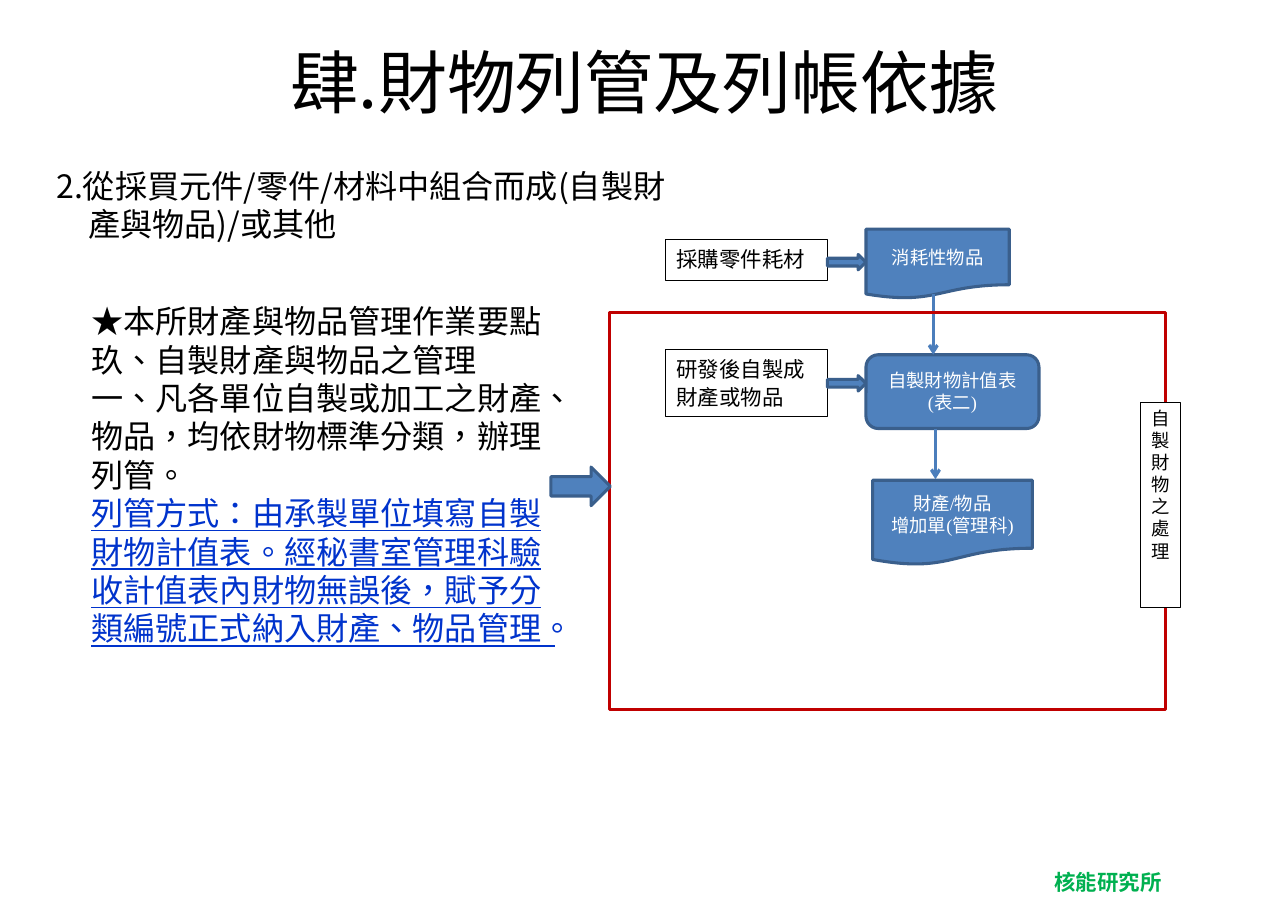
from dataclasses import dataclass
from pptx import Presentation, util as u
from pptx.dml.color import RGBColor
from pptx.enum import shapes, text
from pptx.oxml.ns import qn
from lxml import etree

SHAPE, ALIGN, ANCHOR = shapes.MSO_SHAPE, text.PP_ALIGN, text.MSO_ANCHOR


@dataclass(frozen=True)
class Theme:
    sans: str = "Noto Sans CJK SC"
    serif: str = "Times New Roman"
    ink: str = "000000"
    paper: str = "FFFFFF"
    blue: str = "4F81BD"
    edge: str = "3A5F8C"
    link: str = "4B7EBC"
    red: str = "C00000"
    green: str = "00B050"
    mark: str = "0033CC"
    title: int = 45
    body: int = 21
    note: int = 14
    small: int = 12


T = Theme()
BODY = dict(size=T.body, pitch=25.1)
FLOW = dict(size=T.small, pitch=14.4, face=T.serif, color=T.paper, align=ALIGN.CENTER)
NOTE = dict(size=T.note, pitch=18, face=T.serif)
STRIP = dict(size=T.small, pitch=14.4, face=T.serif)


def assign(item, **values):
    for name, value in values.items():
        setattr(item, name, value)


def rgb(code):
    return RGBColor.from_string(code)


class Board:
    """Draws on one slide; lengths are percentages of its width and height."""

    def __init__(self, deck):
        self.wide, self.high = deck.slide_width, deck.slide_height
        self.slide = deck.slides.add_slide(deck.slide_layouts[3])
        self.items = self.slide.shapes

    def span(self, x, y, w, h):
        return [round(v * side / 100) for v, side in
                ((x, self.wide), (y, self.high), (w, self.wide), (h, self.high))]

    def letter(self, frame, lines, size, pitch=None, face=T.sans, color=T.ink,
               align=ALIGN.LEFT, hang=0, bold=False):
        """Fill a frame; a line is a string or a (string, font changes) pair."""
        for i, line in enumerate(lines):
            words, extra = (line, {}) if isinstance(line, str) else line
            para = frame.paragraphs[0] if i == 0 else frame.add_paragraph()
            props = para._p.get_or_add_pPr()
            props.set("marL", str(u.Inches(hang)))
            props.set("indent", str(-u.Inches(hang)))
            etree.SubElement(props, qn("a:buNone"))
            assign(para, alignment=align, space_before=u.Pt(0), space_after=u.Pt(0))
            if pitch:
                para.line_spacing = u.Pt(pitch)
            run = para.add_run()
            run.text = words
            look = dict(name=face, size=u.Pt(size), bold=bold, underline=False)
            tint = extra.get("color", color)
            look.update((k, v) for k, v in extra.items() if k != "color")
            assign(run.font, **look)
            run.font.color.rgb = rgb(tint)
            mark = run._r.get_or_add_rPr()
            mark.set("lang", "zh-TW")
            mark.find(qn("a:latin")).addnext(
                etree.Element(qn("a:ea"), typeface=T.sans))

    def place(self, index, at, lines, anchor=ANCHOR.TOP, **style):
        """Move and fill one of the layout's placeholders."""
        item = self.slide.placeholders[index]
        assign(item, **dict(zip(("left", "top", "width", "height"), self.span(*at))))
        assign(item.text_frame, auto_size=text.MSO_AUTO_SIZE.NONE,
               word_wrap=True, vertical_anchor=anchor)
        self.letter(item.text_frame, lines, **style)

    def label(self, at, words, **style):
        frame = self.items.add_textbox(*self.span(*at)).text_frame
        frame.word_wrap = False
        self.letter(frame, [words], **style)

    def block(self, kind, at, fill=T.blue, line=T.edge, weight=2, lines=(),
              anchor=ANCHOR.MIDDLE, wrap=False, **style):
        item = self.items.add_shape(kind, *self.span(*at))
        item.shadow.inherit = False
        if fill:
            item.fill.solid()
            item.fill.fore_color.rgb = rgb(fill)
        else:
            item.fill.background()
        item.line.color.rgb = rgb(line)
        item.line.width = u.Pt(weight)
        if lines:
            assign(item.text_frame, vertical_anchor=anchor, word_wrap=wrap)
            self.letter(item.text_frame, lines, **style)

    def note(self, at, lines, **style):
        self.block(SHAPE.RECTANGLE, at, T.paper, T.ink, 0.5, lines,
                   ANCHOR.TOP, True, **style)

    def drop(self, x, top, end):
        """Draw a downward arrow."""
        a, b, _, c = self.span(x, top, 0, end)
        item = self.items.add_connector(shapes.MSO_CONNECTOR.STRAIGHT, a, b, a, c)
        item.line.color.rgb = rgb(T.link)
        item.line.width = u.Pt(2)
        props = item._element.spPr
        etree.SubElement(props.find(qn("a:ln")), qn("a:tailEnd"), type="arrow")
        etree.SubElement(props, qn("a:effectLst"))


def main():
    deck = Presentation()
    assign(deck, slide_width=u.Inches(11.69), slide_height=u.Inches(8.27))
    board = Board(deck)

    board.place(0, (4.96, 3.99, 90.08, 9.79), ["肆.財物列管及列帳依據"],
                ANCHOR.MIDDLE, size=T.title, align=ALIGN.CENTER)
    board.place(1, (3.51, 17.65, 50.04, 9.79),
                ["2.從採買元件/零件/材料中組合而成(自製財產與物品)/或其他"],
                hang=0.29, **BODY)
    board.place(2, (6.24, 32.53, 37.72, 39.66), [
        "★本所財產與物品管理作業要點",
        "玖、自製財產與物品之管理",
        "一、凡各單位自製或加工之財產、物品，均依財物標準分類，辦理列管。",
        ("列管方式：由承製單位填寫自製財物計值表。經秘書室管理科驗收計值表內"
         "財物無誤後，賦予分類編號正式納入財產、物品管理。",
         dict(color=T.mark, underline=True)),
    ], **BODY)
    board.label((81.01, 94.8, 10.09, 4.11), "核能研究所",
                size=T.note, color=T.green, bold=True)

    for kind, at, lines in (
        (SHAPE.FLOWCHART_DOCUMENT, (67.24, 25.15, 11.12, 7.62), ["消耗性物品"]),
        (SHAPE.ROUNDED_RECTANGLE, (67.24, 38.94, 13.43, 8.1),
         ["自製財物計值表", "(表二)"]),
        (SHAPE.FLOWCHART_DOCUMENT, (67.75, 52.72, 12.4, 9.31),
         ["財產/物品", "增加單(管理科)"]),
    ):
        board.block(kind, at, lines=lines, **FLOW)
    for top, high, tip, words in ((26.24, 4.59, 27.93, "採購零件耗材"),
                                  (38.33, 7.38, 41.23, "研發後自製成財產或物品")):
        board.note((51.67, top, 12.57, high), [words], **NOTE)
        board.block(SHAPE.RIGHT_ARROW, (64.24, tip, 2.99, 1.69))
    board.drop(72.46, 32.29, 38.94)
    board.drop(72.63, 47.04, 52.6)

    board.block(SHAPE.RECTANGLE, (47.31, 34.34, 43.2, 43.53), None, T.red)
    board.note((88.54, 44.14, 3.08, 22.49), ["自", "製", "財", "物", "之處理"], **STRIP)
    board.block(SHAPE.RIGHT_ARROW, (42.77, 51.27, 4.62, 4.23))
    deck.save("out.pptx")


if __name__ == "__main__":
    main()
